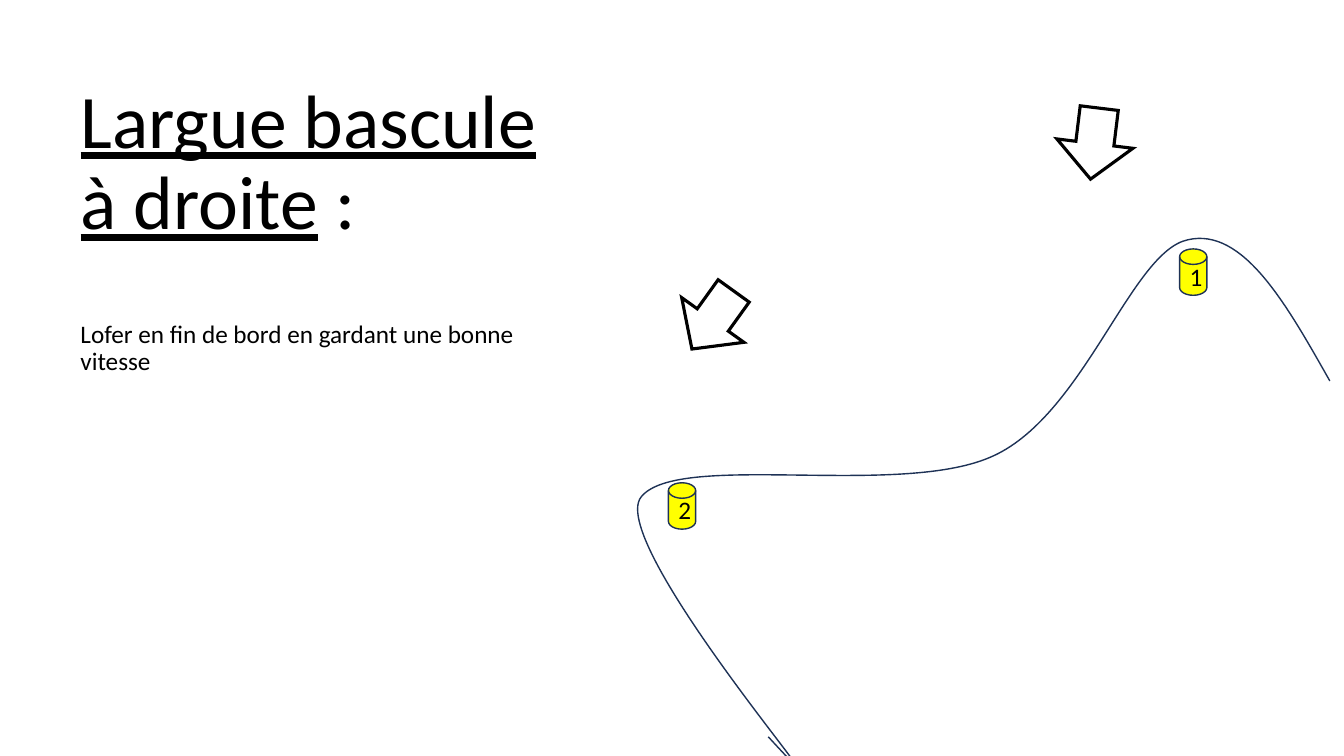
import pptx
import pptx.util
import pptx.dml.color
import pptx.enum.shapes
import pptx.enum.text
import pptx.oxml.ns
import lxml.etree

Inches = pptx.util.Inches
Pt = pptx.util.Pt
qn = pptx.oxml.ns.qn
SHAPE = pptx.enum.shapes.MSO_SHAPE
ANCHOR = pptx.enum.text.MSO_ANCHOR
ALIGN = pptx.enum.text.PP_ALIGN
BLACK = pptx.dml.color.RGBColor(0x00, 0x00, 0x00)
WHITE = pptx.dml.color.RGBColor(0xFF, 0xFF, 0xFF)
YELLOW = pptx.dml.color.RGBColor(0xFF, 0xFF, 0x00)
NAVY = pptx.dml.color.RGBColor(0x1E, 0x32, 0x56)


def write(shape, runs, size, anchor=ANCHOR.TOP, align=ALIGN.LEFT, spacing=1.0, before=0):
    frame = shape.text_frame
    frame.word_wrap = True
    frame.vertical_anchor = anchor
    paragraph = frame.paragraphs[0]
    paragraph.alignment = align
    paragraph.line_spacing = spacing
    paragraph.space_before = Pt(before)
    for text, underlined in runs:
        run = paragraph.add_run()
        run.text = text
        run.font.name = "Calibri"
        run.font.size = Pt(size)
        run.font.color.rgb = BLACK
        run.font.underline = underlined


def paint(shape, fill, line, width):
    shape.shadow.inherit = False
    if fill is None:
        shape.fill.background()
    else:
        shape.fill.solid()
        shape.fill.fore_color.rgb = fill
    shape.line.color.rgb = line
    shape.line.width = Pt(width)
    outline = shape.element.spPr.find(qn("a:ln"))
    lxml.etree.SubElement(outline, qn("a:miter"), lim="800000")


deck = pptx.Presentation()
deck.slide_width = Inches(13.33)
deck.slide_height = Inches(7.5)
slide = deck.slides.add_slide(deck.slide_layouts[6])

title = slide.shapes.add_textbox(Inches(0.7), Inches(0.36), Inches(4.78), Inches(2.13))
write(title, [("Largue bascule à droite", True), (" :", False)], 54,
      anchor=ANCHOR.BOTTOM, spacing=0.9)

advice = slide.shapes.add_textbox(Inches(0.7), Inches(3.14), Inches(4.64), Inches(3.63))
write(advice, [("Lofer en fin de bord en gardant une bonne vitesse", False)], 18,
      spacing=0.9, before=10)

for number, left, top in [("2", 6.63, 4.79), ("1", 11.7, 2.47)]:
    buoy = slide.shapes.add_shape(SHAPE.FLOWCHART_MAGNETIC_DISK,
                                  Inches(left), Inches(top), Inches(0.27), Inches(0.46))
    paint(buoy, YELLOW, NAVY, 1)
    write(buoy, [(number, False)], 18, anchor=ANCHOR.MIDDLE, align=ALIGN.CENTER)

course_left, course_top, course_width, course_height = 6.32, 2.36, 6.87, 5.24
course_start = (13.19, 3.78)
course_bends = [
    ((12.76, 3.02), (12.33, 2.25), (11.78, 2.38)),
    ((11.22, 2.5), (10.76, 4.1), (9.86, 4.52)),
    ((8.95, 4.95), (6.73, 4.47), (6.36, 4.93)),
    ((5.98, 5.4), (8.78, 8.57), (7.62, 7.31)),
]
builder = slide.shapes.build_freeform(Inches(course_start[0]), Inches(course_start[1]))
builder.add_line_segments([(Inches(x), Inches(y)) for *pulls, (x, y) in course_bends], close=False)
course = builder.convert_to_shape()
course.left, course.top = Inches(course_left), Inches(course_top)
course.width, course.height = Inches(course_width), Inches(course_height)
route = course.element.spPr.find(".//" + qn("a:path"))
route.set("w", str(Inches(course_width)))
route.set("h", str(Inches(course_height)))
for leg in list(route):
    route.remove(leg)
for command, points in [("a:moveTo", [course_start])] + [("a:cubicBezTo", bend) for bend in course_bends]:
    leg = lxml.etree.SubElement(route, qn(command))
    for x, y in points:
        lxml.etree.SubElement(leg, qn("a:pt"), x=str(Inches(x - course_left)),
                              y=str(Inches(y - course_top)))
paint(course, None, NAVY, 1)

for left, top, angle in [(10.48, 1.07, 7), (6.69, 2.82, 35.7)]:
    wind = slide.shapes.add_shape(SHAPE.DOWN_ARROW,
                                  Inches(left), Inches(top), Inches(0.76), Inches(0.71))
    wind.rotation = angle
    paint(wind, WHITE, BLACK, 2.25)

deck.save("out.pptx")
